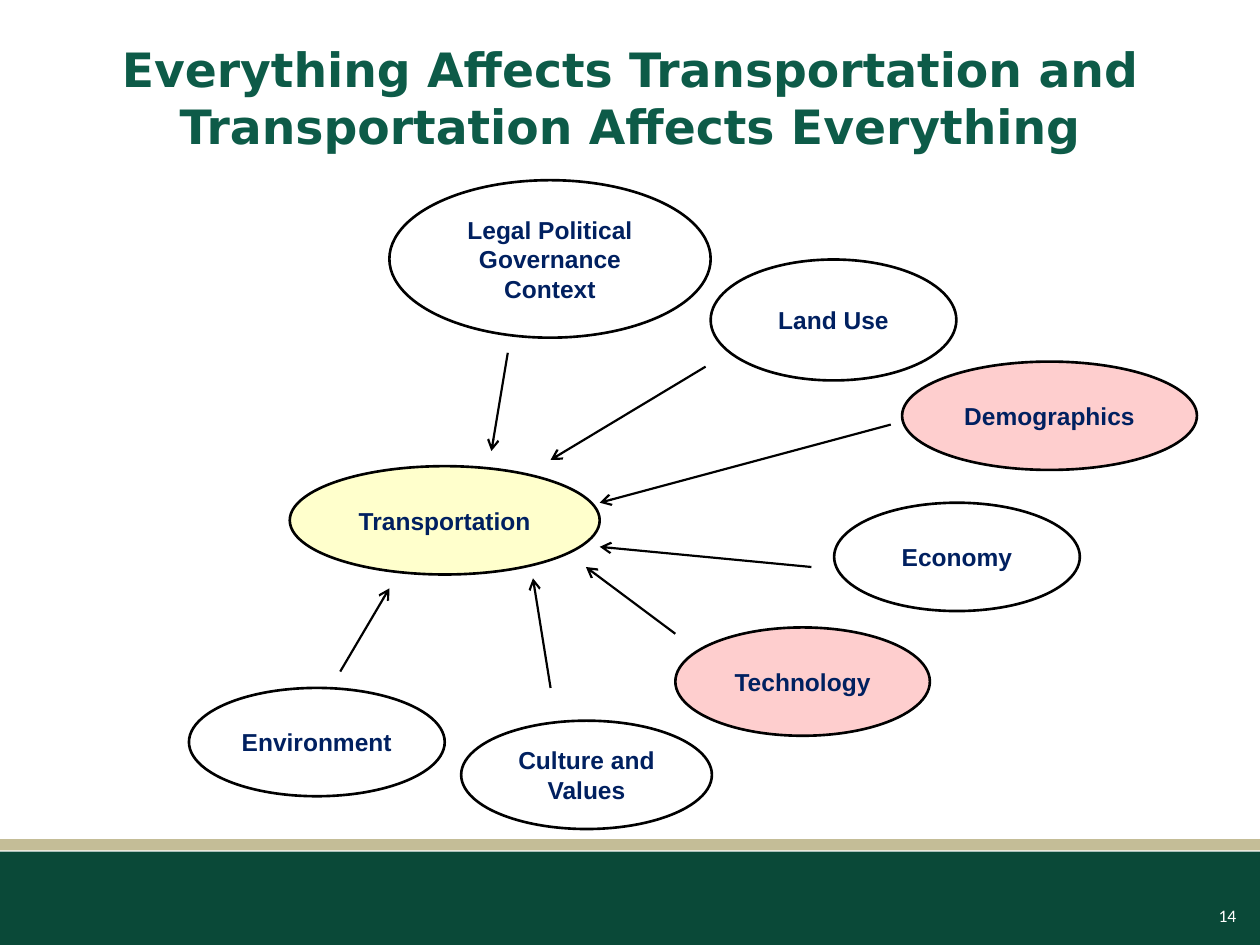
"""Build the slide showing the factors that affect transportation."""
from lxml.etree import SubElement
from pptx import Presentation
from pptx.dml.color import RGBColor
from pptx.enum.shapes import MSO_CONNECTOR as Connector, MSO_SHAPE as Shape
from pptx.enum.text import MSO_ANCHOR as Anchor, PP_ALIGN as Align
from pptx.oxml.ns import qn
from pptx.util import Inches, Pt

WIDTH, HEIGHT = 10, 7.5
WHITE, BLACK, NAVY = "FFFFFF", "000000", "002060"
PINK, YELLOW = "FECECE", "FFFFCC"
TITLE = "Everything Affects Transportation and Transportation Affects Everything"
PAGE_NUMBER = "14"
FOOTER_BANDS = [("C4BD97", 6.66, 0.09), ("0A4938", 6.76, 0.74)]

HUB = ("Transportation", YELLOW, (2.3, 3.7, 2.46, 0.86))
FACTORS = [
    ("Technology", PINK, (5.36, 4.98, 2.02, 0.86), (5.36, 5.03), (4.65, 4.5)),
    ("Culture and Values", WHITE, (3.66, 5.72, 1.99, 0.86), (4.37, 5.46), (4.23, 4.59)),
    ("Economy", WHITE, (6.62, 3.99, 1.95, 0.86), (6.44, 4.5), (4.76, 4.34)),
    ("Demographics", PINK, (7.16, 2.87, 2.34, 0.86), (7.07, 3.37), (4.76, 3.99)),
    ("Legal Political Governance Context", WHITE, (3.09, 1.43, 2.55, 1.25),
     (4.03, 2.8), (3.9, 3.58)),
    ("Land Use", WHITE, (5.64, 2.06, 1.95, 0.96), (5.6, 2.91), (4.37, 3.65)),
    ("Environment", WHITE, (1.5, 5.46, 2.03, 0.86), (2.7, 5.33), (3.09, 4.67)),
]


def rgb(color):
    return RGBColor.from_string(color)


def inches(values):
    return [Inches(value) for value in values]


def write(shape, text, font_name, size, color, bold=False, align=Align.CENTER):
    frame = shape.text_frame
    frame.text = text
    frame.word_wrap = True
    frame.vertical_anchor = Anchor.MIDDLE
    paragraph = frame.paragraphs[0]
    paragraph.alignment = align
    font = paragraph.runs[0].font
    font.name, font.size, font.bold = font_name, Pt(size), bold
    font.color.rgb = rgb(color)


def add_filled(slide, kind, box, fill):
    shape = slide.shapes.add_shape(kind, *inches(box))
    shape.shadow.inherit = False
    shape.fill.solid()
    shape.fill.fore_color.rgb = rgb(fill)
    shape.line.fill.background()
    return shape


def add_topic(slide, label, fill, box):
    oval = add_filled(slide, Shape.OVAL, box, fill)
    oval.line.color.rgb = rgb(BLACK)
    oval.line.width = Pt(1.5)
    write(oval, label, "Arial", 14, NAVY, bold=True)


def add_arrow(slide, start, end):
    arrow = slide.shapes.add_connector(Connector.STRAIGHT, *inches(start + end))
    arrow.line.color.rgb = rgb(BLACK)
    arrow.line.width = Pt(1.25)
    SubElement(arrow.line._get_or_add_ln(), qn("a:tailEnd"), type="arrow")
    SubElement(arrow._element.spPr, qn("a:effectLst"))


def main():
    deck = Presentation()
    deck.slide_width, deck.slide_height = inches((WIDTH, HEIGHT))
    slide = deck.slides.add_slide(deck.slide_layouts[6])

    for color, top, height in FOOTER_BANDS:
        add_filled(slide, Shape.RECTANGLE, (0, top, WIDTH, height), color)
    number = slide.shapes.add_textbox(*inches((8.81, 7.07, 1.1, 0.4)))
    write(number, PAGE_NUMBER, "Calibri", 10, WHITE, align=Align.RIGHT)
    title = slide.shapes.add_textbox(*inches((0.5, 0.29, WIDTH - 1, 0.96)))
    write(title, TITLE, "DejaVu Sans", 27, "0D5B48", bold=True)

    for _, _, _, start, end in FACTORS:
        add_arrow(slide, start, end)
    for label, fill, box in [HUB] + [factor[:3] for factor in FACTORS]:
        add_topic(slide, label, fill, box)
    deck.save("out.pptx")


if __name__ == "__main__":
    main()
